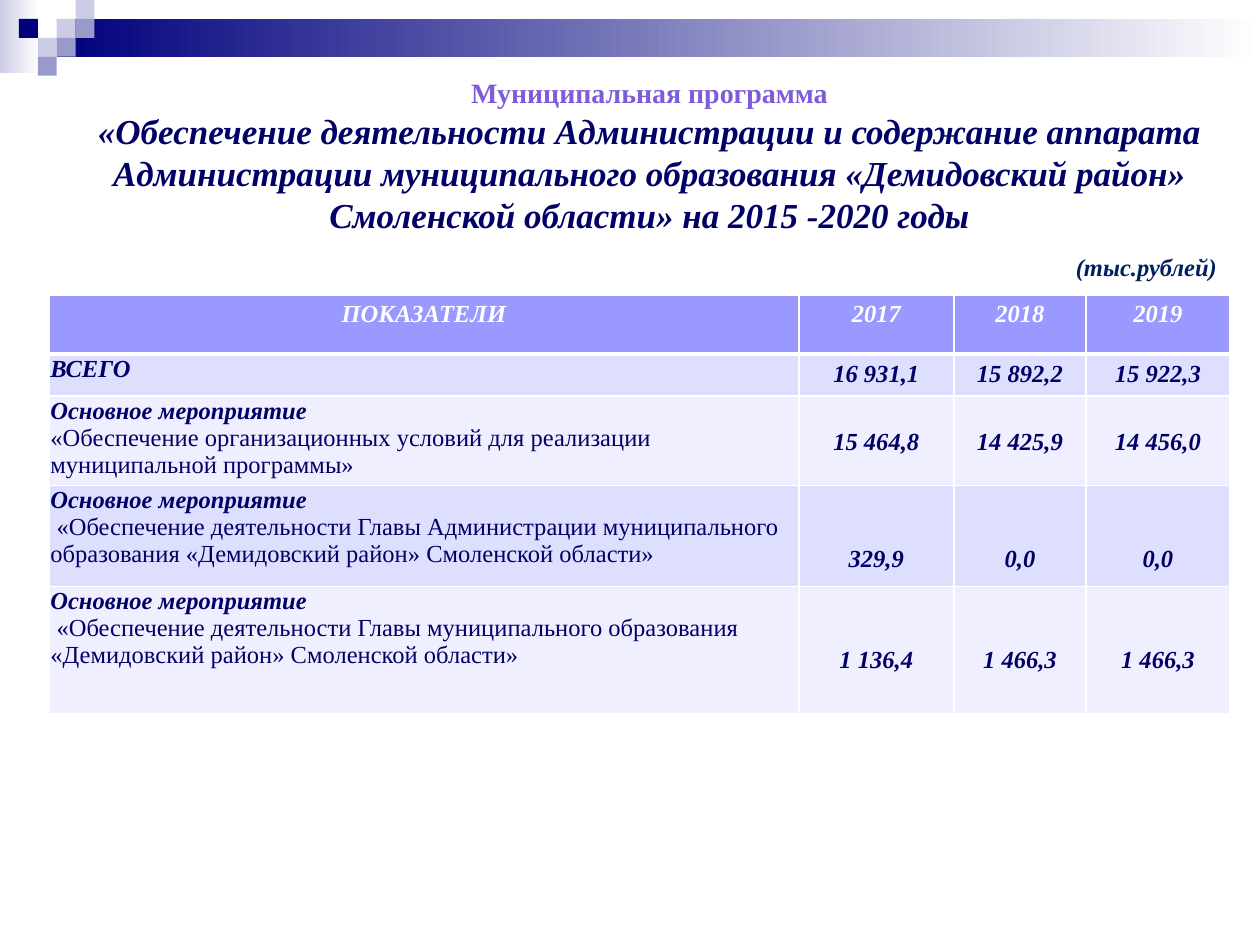
"""Build the slide with the budget table of the municipal programme."""
from lxml.etree import SubElement
from pptx import Presentation
from pptx.dml.color import RGBColor
from pptx.enum.shapes import MSO_SHAPE
from pptx.enum.text import PP_ALIGN
from pptx.oxml.ns import qn
from pptx.util import Inches, Pt

HUES = {
    "white": "FFFFFF", "navy": "00007D", "pale": "CCCCE6", "mid": "9999CC",
    "violet": "7D5CDA", "ink": "000066", "note": "002060",
    "head": "9999FF", "odd": "DEDEFF", "even": "EFEFFF",
}


def style(para, size, hue, bold=True, slant=True, align=PP_ALIGN.CENTER):
    para.alignment = align
    for run in para.runs:
        font = run.font
        font.name, font.size = "Times New Roman", Pt(size)
        font.bold, font.italic = bold, slant
        font.color.rgb = RGBColor.from_string(HUES[hue])


def block(left, top, width, height, hue, fade=False):
    box = slide.shapes.add_shape(
        MSO_SHAPE.RECTANGLE, Inches(left), Inches(top), Inches(width), Inches(height))
    box.shadow.inherit = False
    box.line.fill.background()
    if fade:
        box.fill.gradient()
        box.fill.gradient_angle = 0
        for stop, tone, place in zip(box.fill.gradient_stops, (hue, "white"), (0, 1)):
            stop.color.rgb = RGBColor.from_string(HUES[tone])
            stop.position = place
    else:
        box.fill.solid()
        box.fill.fore_color.rgb = RGBColor.from_string(HUES[hue])


deck = Presentation()
deck.slide_width, deck.slide_height = Inches(10), Inches(7.5)
slide = deck.slides.add_slide(deck.slide_layouts[6])

block(0, 0, 0.31, 0.58, "pale", True)
block(0.45, 0.15, 9.55, 0.3, "navy", True)
for col, row, hue in [(3, 1, "pale"), (4, 0, "pale"), (4, 1, "mid"), (2, 2, "pale"),
                      (1, 1, "navy"), (3, 2, "mid"), (2, 3, "mid")]:
    block(col * 0.15, row * 0.15, 0.15, 0.15, hue)

title = slide.shapes.add_textbox(Inches(0.31), Inches(0.55), Inches(9.69), Inches(1.38))
frame = title.text_frame
frame.word_wrap = True
frame.text = (
    "Муниципальная программа\n"
    "«Обеспечение деятельности Администрации и содержание аппарата "
    "Администрации муниципального образования «Демидовский район» "
    "Смоленской области» на 2015 -2020 годы")
style(frame.paragraphs[0], 16, "violet", slant=False)
style(frame.paragraphs[1], 20, "ink")

TASK = "Основное мероприятие\n"
ROWS = [
    (0.47, 0.05, "head", ["ПОКАЗАТЕЛИ", "2017", "2018", "2019"]),
    (0.33, 0.05, "odd", ["ВСЕГО", "16 931,1", "15 892,2", "15 922,3"]),
    (0.71, 0.26, "even", [
        TASK + "«Обеспечение организационных условий для реализации "
        "муниципальной программы»", "15 464,8", "14 425,9", "14 456,0"]),
    (0.8, 0.48, "odd", [
        TASK + " «Обеспечение деятельности Главы Администрации муниципального "
        "образования «Демидовский район» Смоленской области»", "329,9", "0,0", "0,0"]),
    (1.01, 0.48, "even", [
        TASK + " «Обеспечение деятельности Главы муниципального образования "
        "«Демидовский район» Смоленской области»", "1 136,4", "1 466,3", "1 466,3"]),
]
WIDTHS = [5.95, 1.23, 1.05, 1.14]

table = slide.shapes.add_table(
    len(ROWS), len(WIDTHS), Inches(0.39), Inches(2.34),
    Inches(sum(WIDTHS)), Inches(sum(row[0] for row in ROWS))).table
for col, width in zip(table.columns, WIDTHS):
    col.width = Inches(width)

for r, (height, inset, hue, texts) in enumerate(ROWS):
    table.rows[r].height = Inches(height)
    for c, text in enumerate(texts):
        cell = table.cell(r, c)
        label = r > 0 and c == 0
        cell.text_frame.text = text
        cell.margin_top = Inches(0.01 if label else inset)
        if label:
            cell.margin_left = cell.margin_right = Inches(0.01)
            cell.margin_bottom = 0
        for n, para in enumerate(cell.text_frame.paragraphs):
            style(para, 14, "ink" if r else "white", n == 0, n == 0,
                  PP_ALIGN.LEFT if label else PP_ALIGN.CENTER)
        props = cell._tc.get_or_add_tcPr()
        for side in "LRTB":
            thick = (r, side) in [(0, "B"), (1, "T")]
            edge = SubElement(props, qn("a:ln" + side), w=str(Pt(3 if thick else 1)))
            SubElement(SubElement(edge, qn("a:solidFill")), qn("a:srgbClr"), val=HUES["white"])
        cell.fill.solid()
        cell.fill.fore_color.rgb = RGBColor.from_string(HUES[hue])

unit = slide.shapes.add_textbox(Inches(8.44), Inches(1.95), Inches(1.33), Inches(0.34))
unit.text_frame.word_wrap = False
unit.text_frame.text = "(тыс.рублей)"
style(unit.text_frame.paragraphs[0], 14, "note", align=PP_ALIGN.LEFT)

deck.save("out.pptx")
